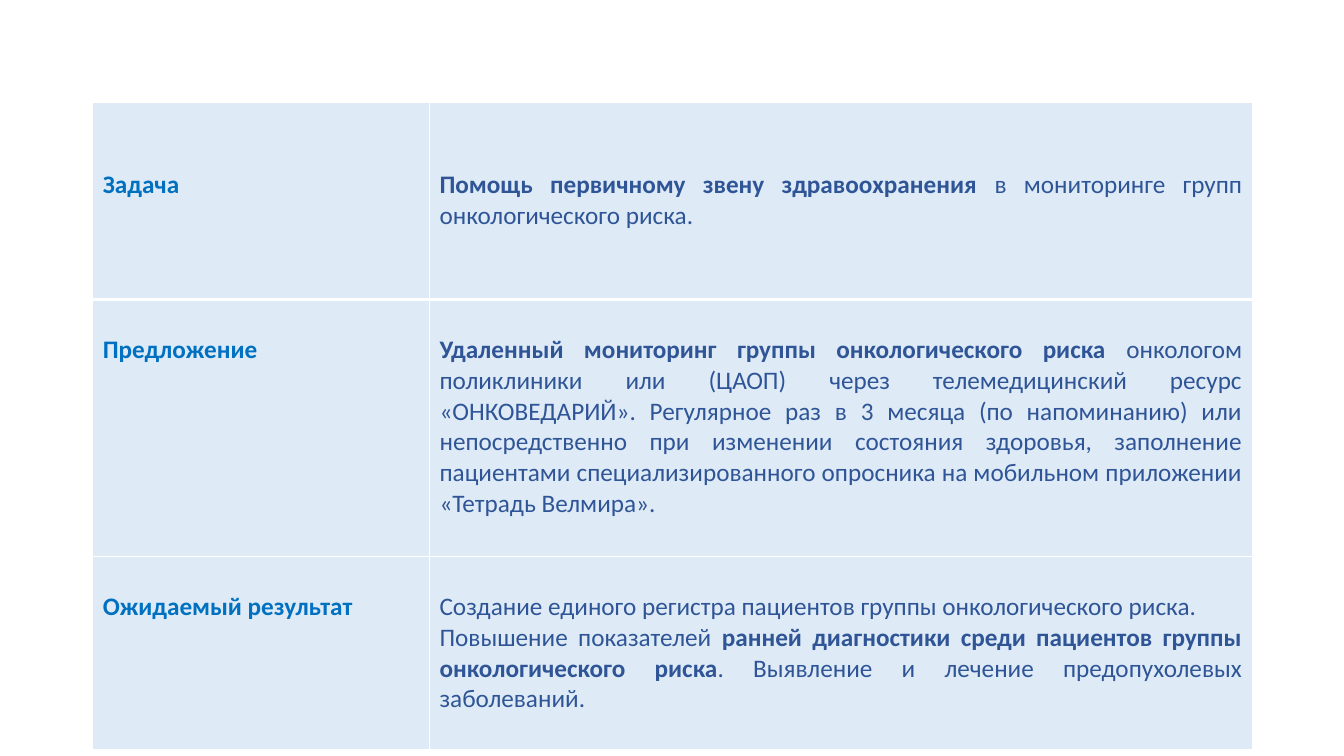
from dataclasses import dataclass

from lxml.etree import SubElement
from pptx import Presentation
from pptx.dml.color import RGBColor as RGB
from pptx.enum.text import PP_ALIGN as Align
from pptx.oxml.ns import qn
from pptx.util import Inches, Pt


@dataclass(frozen=True)
class Theme:
    font: str = "Calibri"
    size: int = 18
    label: str = "0070C0"
    body: str = "2F5597"
    fill: str = "DEEBF7"
    border: str = "FFFFFF"
    thin: int = 1
    thick: int = 3


THEME = Theme()
COLUMNS = (3.34, 8.16)
ROWS = [
    (1.95, 0.66, "Задача", [
        [("Помощь первичному звену здравоохранения ", True),
         ("в мониторинге групп онкологического риска.", False)],
    ]),
    (2.55, 0.35, "Предложение", [
        [("Удаленный мониторинг группы онкологического риска ", True),
         ("онкологом поликлиники или (ЦАОП) через телемедицинский ресурс "
          "«ОНКОВЕДАРИЙ». Регулярное раз в 3 месяца (по напоминанию) или "
          "непосредственно при изменении состояния здоровья, заполнение "
          "пациентами специализированного опросника на мобильном приложении "
          "«Тетрадь Велмира». ", False)],
    ]),
    (1.92, 0.35, "Ожидаемый результат", [
        [("Создание единого регистра пациентов группы онкологического риска.", False)],
        [("Повышение показателей ", False),
         ("ранней диагностики среди пациентов группы онкологического риска", True),
         (". Выявление и лечение предопухолевых заболеваний. ", False)],
    ]),
]


def set_format(obj, values):
    for name, value in values.items():
        setattr(obj, name, value)


def set_borders(cell, widths):
    tc_pr = cell._tc.get_or_add_tcPr()
    for side in "LRTB":
        width = widths.get(side, THEME.thin)
        ln = SubElement(tc_pr, qn(f"a:ln{side}"), w=str(Pt(width)))
        fill = SubElement(ln, qn("a:solidFill"))
        SubElement(fill, qn("a:srgbClr"), val=THEME.border)


def fill_cell(cell, paragraphs, color, align, top, widths):
    set_borders(cell, widths)
    cell.fill.solid()
    cell.fill.fore_color.rgb = RGB.from_string(THEME.fill)
    cell.margin_top = Inches(top)
    tf = cell.text_frame
    for i, runs in enumerate(paragraphs):
        p = tf.add_paragraph() if i else tf.paragraphs[0]
        p.alignment = align
        for text, bold in runs:
            r = p.add_run()
            r.text = text
            set_format(r.font, {"name": THEME.font, "size": Pt(THEME.size), "bold": bold})
            r.font.color.rgb = RGB.from_string(color)


def add_project_table(s, left, top, columns, rows):
    height = sum(row[0] for row in rows)
    table = s.shapes.add_table(
        len(rows), len(columns), Inches(left), Inches(top),
        Inches(sum(columns)), Inches(height)).table
    for column, width in zip(table.columns, columns):
        column.width = Inches(width)
    for i, (row_height, inset, label, body) in enumerate(rows):
        table.rows[i].height = Inches(row_height)
        widths = {0: {"B": THEME.thick}, 1: {"T": THEME.thick}}.get(i, {})
        fill_cell(table.cell(i, 0), [[(label, True)]], THEME.label, Align.LEFT, inset, widths)
        fill_cell(table.cell(i, 1), body, THEME.body, Align.JUSTIFY, inset, widths)


def main():
    prs = Presentation()
    set_format(prs, {"slide_width": Inches(13.33), "slide_height": Inches(7.5)})
    s = prs.slides.add_slide(prs.slide_layouts[6])
    add_project_table(s, 0.92, 1.02, COLUMNS, ROWS)
    prs.save("out.pptx")


if __name__ == "__main__":
    main()
